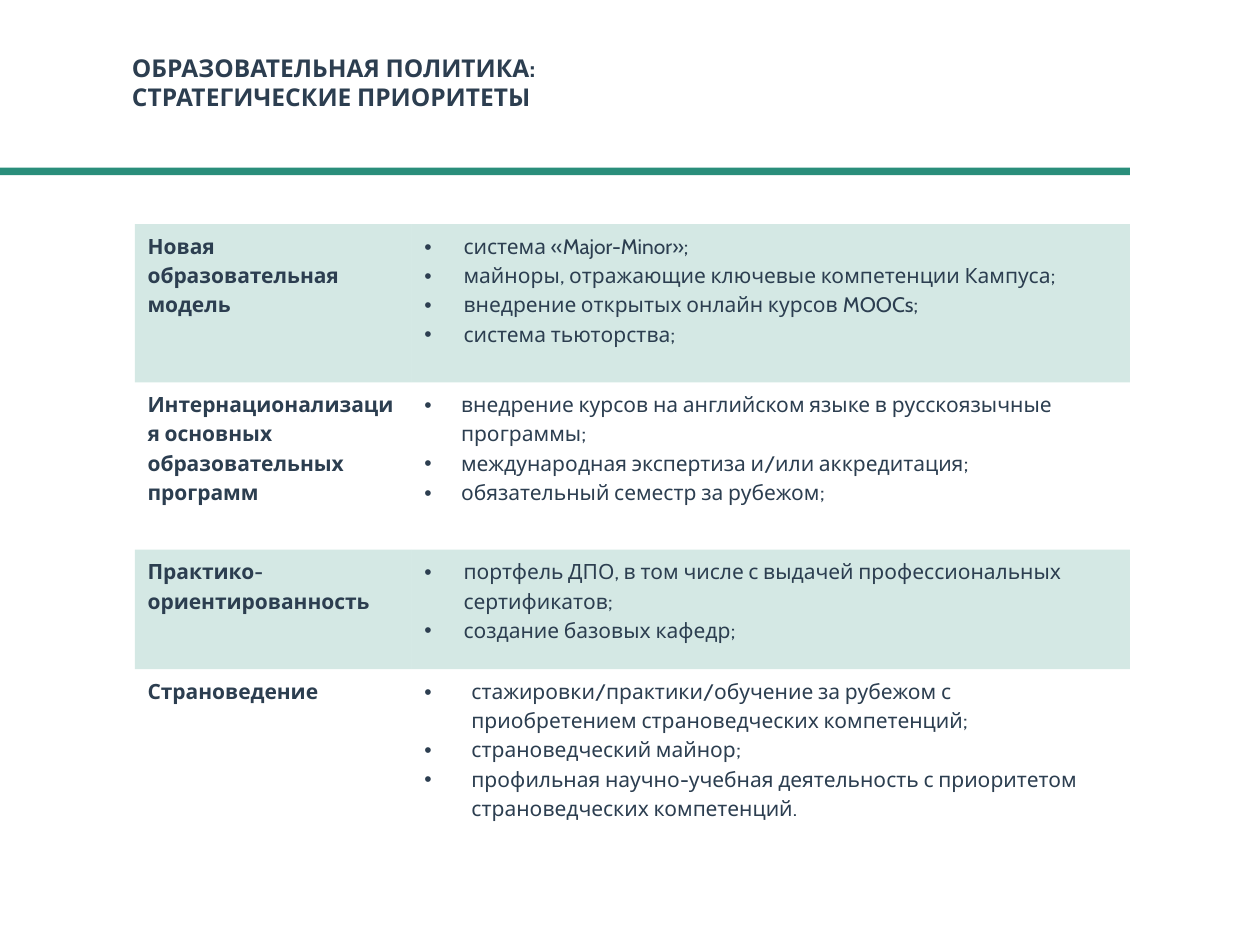
from dataclasses import dataclass

from lxml.etree import SubElement
from pptx import Presentation
from pptx.dml.color import RGBColor
from pptx.enum.shapes import MSO_SHAPE
from pptx.enum.text import MSO_AUTO_SIZE
from pptx.oxml.ns import qn
from pptx.util import Cm, Pt


@dataclass(frozen=True)
class Theme:
    """Colours, fonts and type sizes of the deck."""
    ink: RGBColor = RGBColor(0x2C, 0x3E, 0x50)
    accent: RGBColor = RGBColor(0x2A, 0x8E, 0x7B)
    font: str = "Cabin"
    title_size: Pt = Pt(14)
    body_size: Pt = Pt(12)
    line_spacing: float = 1.14
    band_opacity: int = 20
    plain_table: str = "{2D5ABB26-0587-4C30-8999-92F81FD0307C}"


@dataclass(frozen=True)
class Box:
    """A rectangle in centimetres."""
    left: float
    top: float
    width: float
    height: float

    def place(self):
        """Return the four lengths python-pptx asks for."""
        return Cm(self.left), Cm(self.top), Cm(self.width), Cm(self.height)


@dataclass(frozen=True)
class Priority:
    """One strategic priority with its measures."""
    name: str
    row_height: float
    indent: float
    measures: tuple


THEME = Theme()
TITLE = ("ОБРАЗОВАТЕЛЬНАЯ ПОЛИТИКА:", "СТРАТЕГИЧЕСКИЕ ПРИОРИТЕТЫ")
PRIORITIES = (
    Priority("Новая образовательная модель", 3.19, 0.79, (
        "система «Major-Minor»;",
        "майноры, отражающие ключевые компетенции Кампуса;",
        "внедрение открытых онлайн курсов MOOCs;",
        "система тьюторства;")),
    Priority("Интернационализация основных образовательных программ", 3.37, 0.74, (
        "внедрение курсов на английском языке в русскоязычные программы;",
        "международная экспертиза и/или аккредитация;",
        "обязательный семестр за рубежом;")),
    Priority("Практико-ориентированность", 2.41, 0.79, (
        "портфель ДПО, в том числе с выдачей профессиональных сертификатов;",
        "создание базовых кафедр;")),
    Priority("Страноведение", 3.7, 0.95, (
        "стажировки/практики/обучение за рубежом с приобретением страноведческих компетенций;",
        "страноведческий майнор;",
        "профильная научно-учебная деятельность с приоритетом страноведческих компетенций.")),
)


def write_lines(frame, lines, size, bold):
    """Fill a text frame with one paragraph per line and return the paragraphs."""
    frame.text = "\n".join(lines)
    for para in frame.paragraphs:
        for span in para.runs:
            span.font.name = THEME.font
            span.font.size = size
            span.font.bold = bold
            span.font.color.rgb = THEME.ink
    return frame.paragraphs


def add_bullet(para, indent):
    """Give a paragraph a round bullet with a hanging indent."""
    properties = para._p.get_or_add_pPr()
    properties.set("marL", str(Cm(indent)))
    properties.set("indent", str(-Cm(indent)))
    SubElement(properties, qn("a:buFont"), typeface="Arial")
    SubElement(properties, qn("a:buChar"), char="•")


def tint_cell(cell):
    """Fill a cell with the translucent accent colour."""
    cell.fill.solid()
    cell.fill.fore_color.rgb = THEME.accent
    colour = cell._tc.tcPr.find(qn("a:solidFill"))[0]
    SubElement(colour, qn("a:alpha"), val=str(THEME.band_opacity * 1000))


def add_title(page, box):
    """Place the two-line heading."""
    frame = page.shapes.add_textbox(*box.place()).text_frame
    frame.word_wrap = True
    frame.auto_size = MSO_AUTO_SIZE.SHAPE_TO_FIT_TEXT
    write_lines(frame, TITLE, THEME.title_size, True)


def add_divider(page, box):
    """Place the accent bar under the heading."""
    bar = page.shapes.add_shape(MSO_SHAPE.RECTANGLE, *box.place())
    bar.shadow.inherit = False
    bar.fill.solid()
    bar.fill.fore_color.rgb = THEME.accent
    bar.line.fill.background()


def add_priorities(page, box, name_width):
    """Place the table of priorities, tinting every other row."""
    table = page.shapes.add_table(len(PRIORITIES), 2, *box.place()).table
    table.first_row = table.horz_banding = False
    table._tbl.tblPr.find(qn("a:tableStyleId")).text = THEME.plain_table
    table.columns[0].width = Cm(name_width)
    table.columns[1].width = Cm(box.width - name_width)
    for index, priority in enumerate(PRIORITIES):
        row = table.rows[index]
        row.height = Cm(priority.row_height)
        name_cell, measures_cell = row.cells
        names = write_lines(name_cell.text_frame, [priority.name], THEME.body_size, True)
        measures = write_lines(
            measures_cell.text_frame, priority.measures, THEME.body_size, False)
        for para in (*names, *measures):
            para.line_spacing = THEME.line_spacing
        for para in measures:
            add_bullet(para, priority.indent)
        for cell in row.cells:
            if index % 2 == 0:
                tint_cell(cell)
            else:
                cell.fill.background()


def main():
    """Build and save the slide."""
    deck = Presentation()
    deck.slide_width, deck.slide_height = Cm(25.4), Cm(19.05)
    page = deck.slides.add_slide(deck.slide_layouts[6])
    add_divider(page, Box(0, 3.38, 22.78, 0.15))
    add_title(page, Box(2.41, 0.94, 15.98, 1.45))
    table_height = sum(priority.row_height for priority in PRIORITIES)
    add_priorities(page, Box(2.72, 4.52, 20.06, table_height), 5.58)
    deck.save("out.pptx")


if __name__ == "__main__":
    main()
